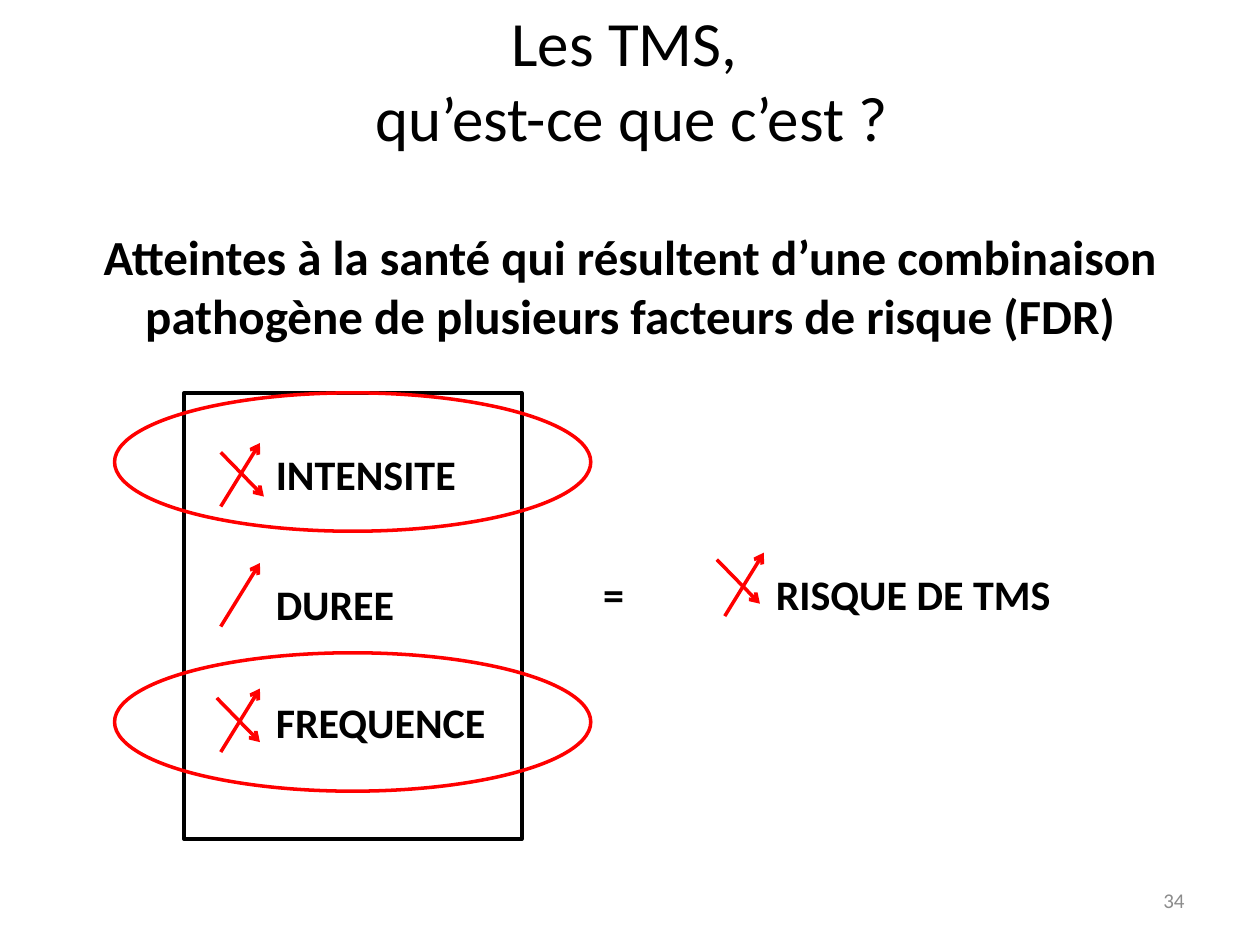
from dataclasses import dataclass

from lxml import etree
from pptx import Presentation
from pptx.dml.color import RGBColor
from pptx.enum.shapes import MSO_CONNECTOR, MSO_SHAPE
from pptx.enum.text import MSO_ANCHOR, MSO_AUTO_SIZE, PP_ALIGN
from pptx.oxml.ns import qn
from pptx.util import Cm, Pt

LEFT, CENTER, RIGHT = PP_ALIGN.LEFT, PP_ALIGN.CENTER, PP_ALIGN.RIGHT
TOP, MIDDLE = MSO_ANCHOR.TOP, MSO_ANCHOR.MIDDLE
FIXED = MSO_AUTO_SIZE.NONE
RECT, OVAL = MSO_SHAPE.RECTANGLE, MSO_SHAPE.OVAL
STRAIGHT = MSO_CONNECTOR.STRAIGHT

FONT = "Calibri"
COLORS = {"ink": "000000", "red": "FF0000", "grey": "8C8C8C"}
RISE = (0.79, -1.28)
FALL = (0.87, 0.89)


@dataclass
class Box:
    x: float
    y: float
    w: float
    h: float

    def place(self) -> tuple:
        return Cm(self.x), Cm(self.y), Cm(self.w), Cm(self.h)


@dataclass
class Label:
    text: str
    x: float
    y: float
    w: float


@dataclass
class Arrow:
    x: float
    y: float
    step: tuple


LABELS = [
    Label("INTENSITE", 5.31, 8.92, 4.8),
    Label("DUREE", 5.31, 11.53, 4.8),
    Label("FREQUENCE", 5.31, 13.92, 4.8),
    Label("=", 11.91, 11.33, 1.19),
    Label("RISQUE DE TMS", 15.39, 11.33, 6.4),
]
ARROWS = [
    Arrow(4.45, 10.21, RISE),
    Arrow(4.45, 12.63, RISE),
    Arrow(4.45, 15.16, RISE),
    Arrow(14.61, 12.42, RISE),
    Arrow(4.45, 9.12, FALL),
    Arrow(4.37, 14.07, FALL),
    Arrow(14.45, 11.28, FALL),
]


def color(name: str) -> RGBColor:
    return RGBColor.from_string(COLORS[name])


def write(shape, text: str, size=24, tint="ink", bold=False, align=LEFT, anchor=TOP) -> None:
    frame = shape.text_frame
    frame.text = text
    frame.word_wrap = True
    frame.auto_size = FIXED
    frame.vertical_anchor = anchor
    for para in frame.paragraphs:
        para.alignment = align
        for run in para.runs:
            font = run.font
            font.name, font.size, font.bold = FONT, Pt(size), bold
            font.color.rgb = color(tint)


def add_text(slide, box: Box, text: str, **style) -> None:
    write(slide.shapes.add_textbox(*box.place()), text, **style)


def add_frame(slide, kind, box: Box, tint: str) -> None:
    shape = slide.shapes.add_shape(kind, *box.place())
    shape.shadow.inherit = False
    shape.fill.background()
    shape.line.color.rgb = color(tint)
    shape.line.width = Pt(2)


def add_arrow(slide, arrow: Arrow) -> None:
    dx, dy = arrow.step
    link = slide.shapes.add_connector(
        STRAIGHT, Cm(arrow.x), Cm(arrow.y), Cm(arrow.x + dx), Cm(arrow.y + dy)
    )
    link.line.color.rgb = color("red")
    link.line.width = Pt(2)
    etree.SubElement(link.line._get_or_add_ln(), qn("a:tailEnd"), type="arrow")
    etree.SubElement(link._element.spPr, qn("a:effectLst"))


def main() -> None:
    deck = Presentation()
    deck.slide_width, deck.slide_height = Cm(25.4), Cm(19.05)
    slide = deck.slides.add_slide(deck.slide_layouts[5])

    title = slide.shapes.title
    title.left, title.top, title.width, title.height = Box(1.3, 0, 22.86, 3.18).place()
    write(title, "Les TMS, \vqu’est-ce que c’est ?", size=36, align=CENTER, anchor=MIDDLE)

    add_text(
        slide,
        Box(1.27, 4.45, 22.86, 12.57),
        "Atteintes à la santé qui résultent d’une combinaison "
        "pathogène de plusieurs facteurs de risque (FDR)",
        size=28, bold=True, align=CENTER,
    )
    add_text(slide, Box(18.2, 17.65, 5.93, 1.01), "34",
             size=12, tint="grey", align=RIGHT, anchor=MIDDLE)
    for label in LABELS:
        add_text(slide, Box(label.x, label.y, label.w, 1.27), label.text, bold=True)

    add_frame(slide, RECT, Box(3.71, 7.92, 6.81, 9), "ink")
    for y in (7.92, 13.16):
        add_frame(slide, OVAL, Box(2.31, y, 9.6, 2.79), "red")
    for arrow in ARROWS:
        add_arrow(slide, arrow)

    deck.save("out.pptx")


if __name__ == "__main__":
    main()
